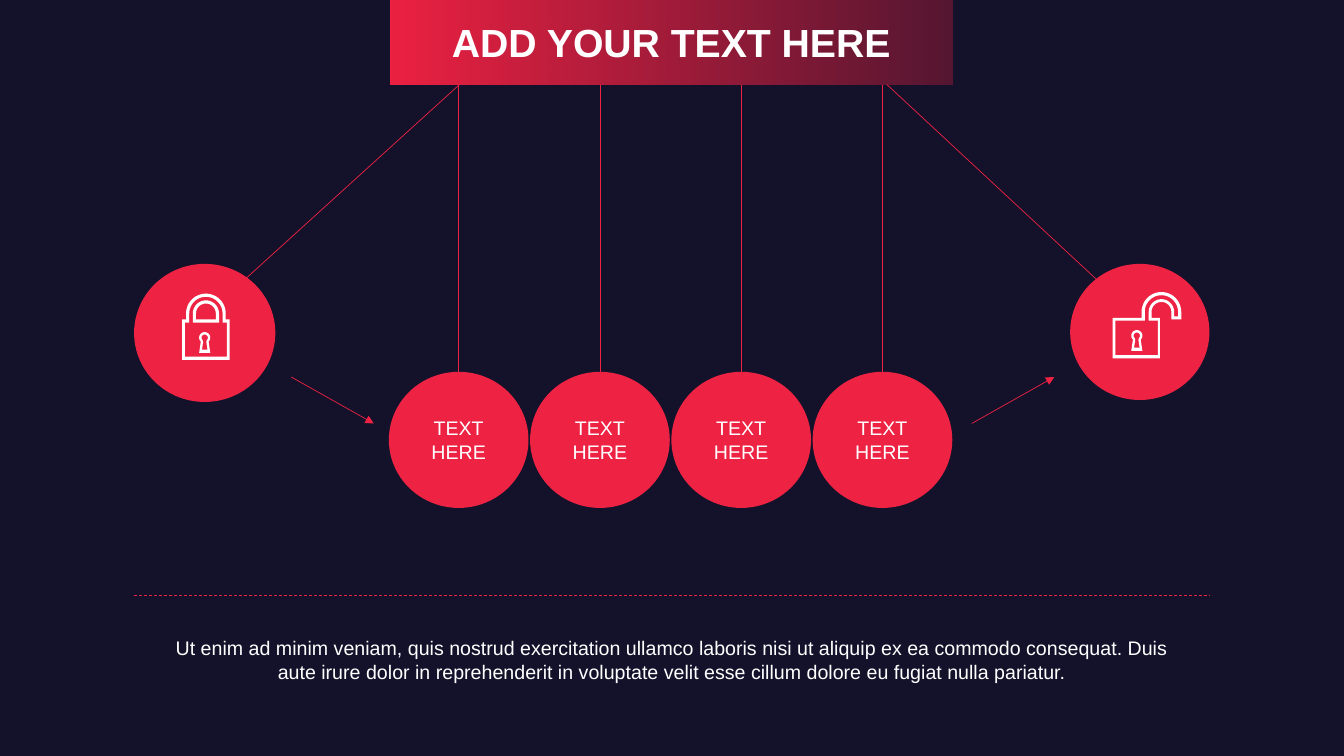
"""Build a slide with a hanging row of circles between a closed and an open lock."""
import math

import pptx
import pptx.dml.color
import pptx.enum.dml
import pptx.enum.shapes
import pptx.enum.text
import pptx.oxml
import pptx.oxml.ns
import pptx.util

Cm = pptx.util.Cm
Pt = pptx.util.Pt
Shape = pptx.enum.shapes.MSO_SHAPE
NAVY = pptx.dml.color.RGBColor(0x14, 0x12, 0x2A)
RED = pptx.dml.color.RGBColor(0xEE, 0x22, 0x43)
WHITE = pptx.dml.color.RGBColor(0xFF, 0xFF, 0xFF)
BODY_TEXT = (
    "Ut enim ad minim veniam, quis nostrud exercitation ullamco laboris nisi ut aliquip "
    "ex ea commodo consequat. Duis aute irure dolor in reprehenderit in voluptate velit "
    "esse cillum dolore eu fugiat nulla pariatur."
)


def add_element(parent, tag, **attributes):
    element = pptx.oxml.parse_xml(f"<a:{tag} {pptx.oxml.ns.nsdecls('a')}/>")
    for name, value in attributes.items():
        element.set(name, value)
    parent.append(element)


def write(frame, text, size=14, bold=False, space_after=0, wrap=False, inset=None):
    frame.word_wrap = wrap
    frame.auto_size = pptx.enum.text.MSO_AUTO_SIZE.NONE
    if inset is not None:
        frame.margin_left = frame.margin_right = Cm(inset)
        frame.margin_top = frame.margin_bottom = Cm(inset)
        frame.vertical_anchor = pptx.enum.text.MSO_ANCHOR.MIDDLE
    frame.text = text
    for para in frame.paragraphs:
        para.alignment = pptx.enum.text.PP_ALIGN.CENTER
        para.space_before = Pt(0)
        para.space_after = Pt(space_after)
        para.line_spacing = 1.0
        for span in para.runs:
            span.font.name = "Arial"
            span.font.size = Pt(size)
            span.font.bold = bold
            span.font.color.rgb = WHITE


def arc(radius, start=180, end=360, center=(0, 0), steps=24):
    angles = [math.radians(start + (end - start) * step / steps) for step in range(steps + 1)]
    return [(center[0] + radius * math.cos(angle), center[1] + radius * math.sin(angle))
            for angle in angles]


def keyhole(x, y):
    contours = []
    for radius, neck, base, bottom in ((0.14, 0.1, 0.14, 0.38), (0.08, 0.04, 0.07, 0.3)):
        contours.append(arc(radius, 130, 410, (x, y))
                        + [(x + neck, y + 0.11), (x + base, y + bottom),
                           (x - base, y + bottom), (x - neck, y + 0.11)])
    return contours


def closed_lock():
    contours = keyhole(-0.03, 0.61)
    for radius, side, top, bottom in ((0.5, 0.6, 0.15, 1.17), (0.42, 0.53, 0.23, 1.09)):
        contours.append([(-side, bottom), (-side, top), (-radius, top)] + arc(radius)
                        + [(radius, top), (side, top), (side, bottom)])
    for radius, bottom in ((0.33, 0.23), (0.25, 0.15)):
        contours.append(arc(radius) + [(radius, bottom), (-radius, bottom)])
    return contours


def open_lock():
    contours = keyhole(-0.62, 0.6)
    for outer, inner, tip, left, right, top, bottom in (
            (0.5, 0.25, 0.19, -1.23, -0.04, 0.15, 1.17),
            (0.42, 0.32, 0.11, -1.16, -0.09, 0.22, 1.09)):
        contours.append(arc(outer) + [(outer, tip), (inner, tip)] + arc(inner, 360, 180)
                        + [(-inner, top), (right, top), (right, bottom),
                           (left, bottom), (left, top), (-outer, top)])
    return contours


class Page:
    def __init__(self, deck):
        self.slide = deck.slides.add_slide(deck.slide_layouts[5])
        self.shapes = self.slide.shapes
        self.slide.background.fill.solid()
        self.slide.background.fill.fore_color.rgb = NAVY

    def paint(self, shape, color):
        shape.shadow.inherit = False
        shape.fill.solid()
        shape.fill.fore_color.rgb = color
        shape.line.fill.background()

    def banner(self, text, left, top, width, height):
        title = self.shapes.title
        title.left, title.top, title.width, title.height = map(Cm, (left, top, width, height))
        title.fill.gradient()
        title.fill.gradient_angle = 0
        for position, stop in enumerate(title.fill.gradient_stops):
            stop.position = position
            stop.color.rgb = RED
        add_element(title.element.xpath(".//a:gs")[-1][0], "alpha", val="30000")
        write(title.text_frame, text, size=28, bold=True, inset=0.13)

    def circle(self, left, top, width, height, text=None):
        ball = self.shapes.add_shape(Shape.OVAL, Cm(left), Cm(top), Cm(width), Cm(height))
        self.paint(ball, RED)
        if text:
            write(ball.text_frame, text, inset=0.13)
        return ball

    def line(self, start, end, arrow=False, dashed=False):
        line = self.shapes.add_connector(
            pptx.enum.shapes.MSO_CONNECTOR.STRAIGHT, *map(Cm, start + end))
        line.line.color.rgb = RED
        line.line.width = Pt(0.5)
        if dashed:
            line.line.dash_style = pptx.enum.dml.MSO_LINE.DASH
        if arrow:
            add_element(line.element.xpath(".//a:ln")[0], "tailEnd", type="triangle")
        add_element(line.element.spPr, "effectLst")
        return line

    def icon(self, contours, x, y):
        outlines = [[(Cm(x + across), Cm(y + down)) for across, down in contour]
                    for contour in contours]
        builder = self.shapes.build_freeform(*outlines[0][0])
        builder.add_line_segments(outlines[0][1:], close=True)
        for outline in outlines[1:]:
            builder.move_to(*outline[0])
            builder.add_line_segments(outline[1:], close=True)
        self.paint(builder.convert_to_shape(), WHITE)

    def paragraph(self, text, left, top, width, height):
        box = self.shapes.add_textbox(Cm(left), Cm(top), Cm(width), Cm(height))
        write(box.text_frame, text, space_after=6, wrap=True)


def main():
    deck = pptx.Presentation()
    deck.slide_width, deck.slide_height = Cm(33.87), Cm(19.05)
    page = Page(deck)
    banner_bottom = 2.13
    page.banner("ADD YOUR TEXT HERE", 9.83, 0, 14.17, banner_bottom)

    page.line((11.58, banner_bottom), (5.28, 7.85))
    page.line((22.35, banner_bottom), (27.74, 7.14))
    ball_width, ball_top, pitch = 3.52, 9.37, 3.56
    for index in range(4):
        left = 9.8 + index * pitch
        center = left + ball_width / 2
        ball = page.circle(left, ball_top, ball_width, 3.43, "TEXT\nHERE")
        string = page.line((center, ball_top), (center, banner_bottom))
        string.begin_connect(ball, 0)

    page.circle(3.38, 6.65, 3.56, 3.48)
    page.circle(26.97, 6.65, 3.51, 3.43)
    page.icon(closed_lock(), 5.19, 7.9)
    page.icon(open_lock(), 29.27, 7.86)
    page.line((7.34, 9.5), (9.42, 10.67), arrow=True)
    page.line((24.49, 10.67), (26.57, 9.5), arrow=True)

    page.line((3.38, 14.99), (30.48, 14.99), dashed=True)
    page.paragraph(BODY_TEXT, 3.68, 15.9, 26.52, 1.45)
    deck.save("out.pptx")


if __name__ == "__main__":
    main()
